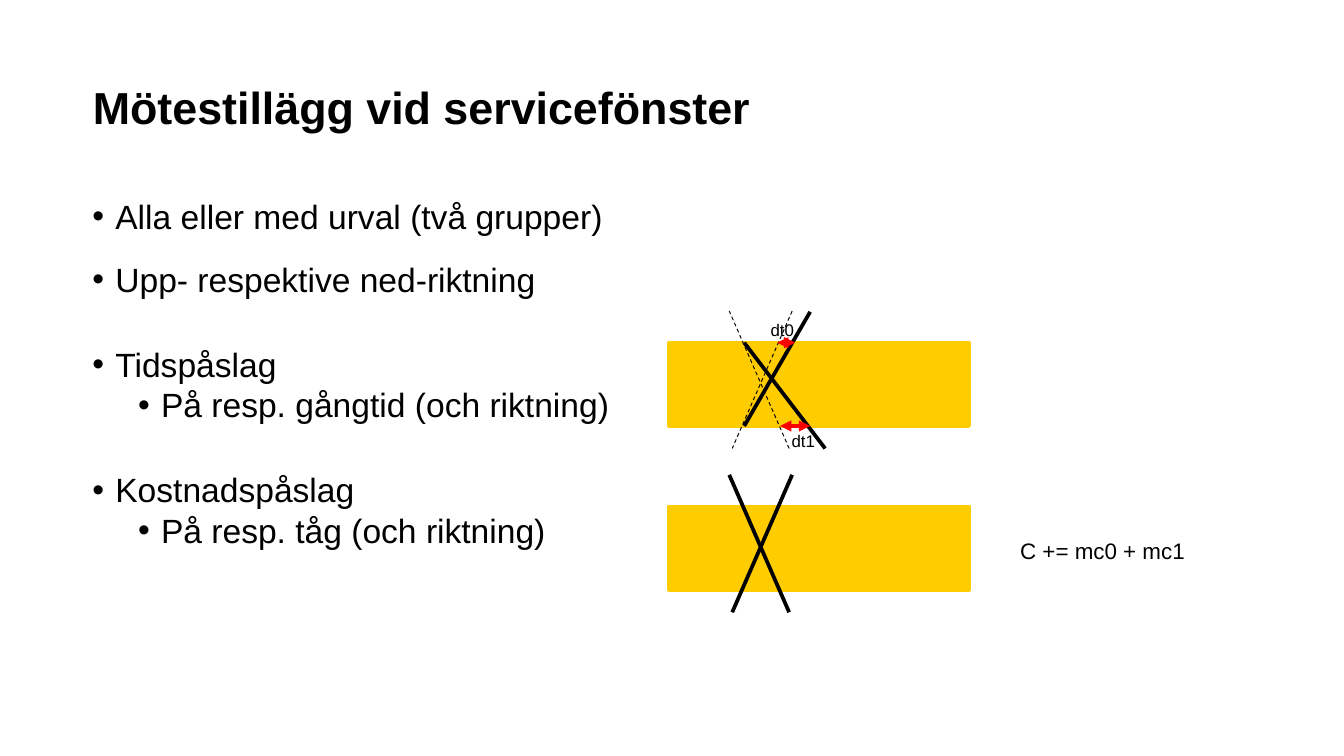
from dataclasses import dataclass

from lxml import etree
from pptx import Presentation
from pptx import util as u
from pptx.dml.color import RGBColor
from pptx.enum import dml, shapes, text
from pptx.oxml import ns


@dataclass(frozen=True)
class Theme:
    font: str = "Arial"
    ink: str = "000000"
    band: str = "FFCC00"
    shift: str = "FF0000"
    title: int = 24
    body: int = 18
    formula: int = 12
    label: int = 9
    bold_line: float = 2
    thin_line: float = 0.5


theme = Theme()
WIDTH = 10
HEIGHT = WIDTH * 9 / 16

# Content: text, level, space before, space after
TITLE = "Mötestillägg vid servicefönster"
BULLETS = [
    ("Alla eller med urval (två grupper)", 0, 0, 12),
    ("Upp- respektive ned-riktning", 0, 0, 12),
    ("Tidspåslag", 0, 12, 0),
    ("På resp. gångtid (och riktning)", 1, 0, 12),
    ("Kostnadspåslag", 0, 12, 0),
    ("På resp. tåg (och riktning)", 1, 0, 6),
]
INDENTS = (0.17, 0.51)
HANGING = 0.17
FORMULA = "C += mc0 + mc1"

# Places in percent of the slide: left, top, width, height
TITLE_AREA = (5.9, 10.49, 82.7, 6.93)
BODY_AREA = (5.9, 25.07, 82.7, 58.84)
FORMULA_AREA = (75.5, 70.22, 14.5, 5.33)
TIME_BAND = (49.8, 45.33, 22.3, 11.02)
COST_BAND = (49.8, 67, 22.3, 11.02)

# Train paths and labels in shares of their band: x1, y1, x2, y2
PLANNED = [(0.4, 1.27, 0.2, -0.38), (0.41, -0.38, 0.21, 1.27)]
DELAYED = [(0.52, 1.27, 0.25, 0), (0.47, -0.37, 0.25, 1)]
SHIFTS = [(0.36, 0, 0.42, 0), (0.37, 1, 0.47, 1)]
SHIFT_LABELS = [("dt0", 0.32, -0.35), ("dt1", 0.39, 0.98)]
LABEL_SIZE = (0.26, 0.25)


def place(area):
    """Turn percent of the slide into inches."""
    return [share * side / 100 for share, side in zip(area, (WIDTH, HEIGHT) * 2)]


def within(band, x, y):
    left, top, width, height = place(band)
    return left + x * width, top + y * height


def inches(values):
    return [u.Inches(value) for value in values]


def set_frame(box, insets, wrap=True):
    frame = box.text_frame
    frame.word_wrap = wrap
    frame.vertical_anchor = text.MSO_ANCHOR.TOP
    frame.margin_left = frame.margin_right = u.Inches(insets[0])
    frame.margin_top = frame.margin_bottom = u.Inches(insets[1])
    return frame


def add_span(para, words, size, bold=False):
    para.alignment = text.PP_ALIGN.LEFT
    span = para.add_run()
    span.text = words
    span.font.name = theme.font
    span.font.size = u.Pt(size)
    span.font.bold = bold
    span.font.color.rgb = RGBColor.from_string(theme.ink)


def add_label(page, words, size, rect, wrap):
    box = page.shapes.add_textbox(*inches(rect))
    frame = set_frame(box, (0.04, 0.05), wrap)
    frame.auto_size = text.MSO_AUTO_SIZE.SHAPE_TO_FIT_TEXT
    add_span(frame.paragraphs[0], words, size)


def add_band(page, area):
    band = page.shapes.add_shape(shapes.MSO_SHAPE.RECTANGLE, *inches(place(area)))
    band.shadow.inherit = False
    band.fill.solid()
    band.fill.fore_color.rgb = RGBColor.from_string(theme.band)
    band.line.color.rgb = RGBColor.from_string(theme.band)
    band.line.width = u.Pt(theme.bold_line)


def add_lines(page, band, paths, color=theme.ink, width=theme.bold_line,
              dashed=False, arrows=False):
    for x1, y1, x2, y2 in paths:
        ends = within(band, x1, y1) + within(band, x2, y2)
        line = page.shapes.add_connector(shapes.MSO_CONNECTOR.STRAIGHT, *inches(ends))
        line.line.color.rgb = RGBColor.from_string(color)
        line.line.width = u.Pt(width)
        if dashed:
            line.line.dash_style = dml.MSO_LINE.DASH
        if arrows:
            stroke = line.line._get_or_add_ln()
            for end in ("a:headEnd", "a:tailEnd"):
                etree.SubElement(stroke, ns.qn(end), type="triangle")
        etree.SubElement(line._element.spPr, ns.qn("a:effectLst"))


def add_bullet(para, level):
    para.level = level
    props = para._p.get_or_add_pPr()
    props.set("marL", str(u.Inches(INDENTS[level])))
    props.set("indent", str(-u.Inches(HANGING)))
    etree.SubElement(props, ns.qn("a:buFont"), typeface=theme.font)
    etree.SubElement(props, ns.qn("a:buChar"), char="•")


def main():
    deck = Presentation()
    deck.slide_width, deck.slide_height = inches((WIDTH, HEIGHT))
    page = deck.slides.add_slide(deck.slide_layouts[5])

    # Title
    title = page.shapes.title
    title.left, title.top, title.width, title.height = inches(place(TITLE_AREA))
    frame = set_frame(title, (0.1, 0.05))
    frame.auto_size = text.MSO_AUTO_SIZE.NONE
    frame.paragraphs[0].line_spacing = 0.9
    add_span(frame.paragraphs[0], TITLE, theme.title, bold=True)

    # Bullet list
    body = page.shapes.add_textbox(*inches(place(BODY_AREA)))
    frame = set_frame(body, (0.1, 0.05))
    for number, (words, level, before, after) in enumerate(BULLETS):
        para = frame.add_paragraph() if number else frame.paragraphs[0]
        add_bullet(para, level)
        para.space_before = u.Pt(before)
        para.space_after = u.Pt(after)
        add_span(para, words, theme.body)

    # Time supplement: delayed trains against the planned ones
    add_band(page, TIME_BAND)
    add_lines(page, TIME_BAND, DELAYED)
    add_lines(page, TIME_BAND, PLANNED, width=theme.thin_line, dashed=True)
    add_lines(page, TIME_BAND, SHIFTS, color=theme.shift, arrows=True)
    for words, x, y in SHIFT_LABELS:
        rect = within(TIME_BAND, x, y) + LABEL_SIZE
        add_label(page, words, theme.label, rect, wrap=False)

    # Cost supplement: trains keep their planned paths
    add_band(page, COST_BAND)
    add_lines(page, COST_BAND, PLANNED)
    add_label(page, FORMULA, theme.formula, place(FORMULA_AREA), wrap=True)

    deck.save("out.pptx")


if __name__ == "__main__":
    main()
